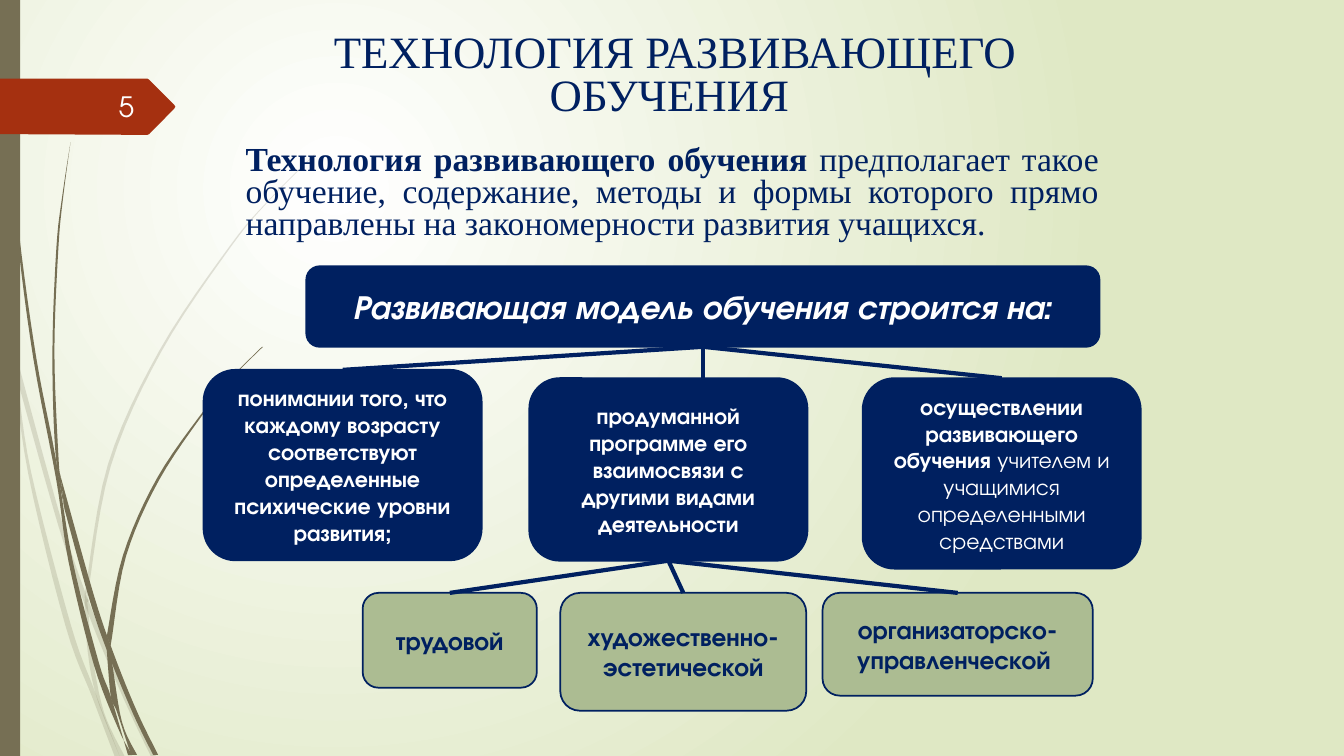
from dataclasses import dataclass
from lxml import etree
from pptx import Presentation, util as u
from pptx.dml.color import RGBColor
from pptx.enum import shapes, text
from pptx.oxml.ns import qn


@dataclass(frozen=True)
class Theme:
    navy: str = "002060"
    sage: str = "ACBC92"
    white: str = "FFFFFF"
    light: str = "FEFFFF"
    lime: str = "DFE8C4"
    bark: str = "766F54"
    rust: str = "A53010"
    serif: str = "Times New Roman"
    sans: str = "TeX Gyre Adventor"
    title: int = 32
    lead: int = 24
    page: int = 20
    leaf: int = 18
    node: int = 16


def curve(pts, steps=6):
    """Return points of a smooth line that passes through pts."""
    ends = [pts[0], *pts, pts[-1]]
    out = []
    for a, b, c, d in zip(ends, ends[1:], ends[2:], ends[3:]):
        for i in range(steps):
            t = i / steps
            out.append(tuple(
                (2 * q + (r - p) * t + (2 * p - 5 * q + 4 * r - s) * t**2
                 + (3 * q - p - 3 * r + s) * t**3) / 2
                for p, q, r, s in zip(a, b, c, d)))
    return out + [pts[-1]]


def write(shape, runs, size, face, tint, align, anchor, slant=None, space=None):
    """Fill a shape with one paragraph; runs are (words, bold) pairs."""
    frame = shape.text_frame
    frame.word_wrap = True
    frame.vertical_anchor = anchor
    para = frame.paragraphs[0]
    para.alignment = align
    para.line_spacing = space
    font = para.font
    font.size, font.name, font.italic = u.Pt(size), face, slant
    font.color.rgb = RGBColor.from_string(tint)
    if len(runs) == 1:
        font.bold = runs[0][1]
    for words, bold in runs:
        run = para.add_run()
        run.text = words
        if len(runs) > 1:
            run.font.bold = bold


look = Theme()
deck = Presentation()
deck.slide_width, deck.slide_height = u.Cm(33.87), u.Cm(19.05)
slide = deck.slides.add_slide(deck.slide_layouts[6])
items = slide.shapes
mid, top = text.MSO_ANCHOR.MIDDLE, text.MSO_ANCHOR.TOP
side = text.PP_ALIGN

# Background glow
glow = slide.background.fill
glow.gradient()
for stop, tint in zip(glow.gradient_stops, (look.white, look.lime)):
    stop.color.rgb = RGBColor.from_string(tint)
grad = next(slide._element.iter(qn("a:gradFill")))
grad.remove(grad.find(qn("a:lin")))
path = etree.SubElement(grad, qn("a:path"), path="circle")
etree.SubElement(path, qn("a:fillToRect"),
                 l="50000", t="50000", r="100000", b="100000")

# Grass blades: two edges each, on a fine grid
grid = u.Cm(0.0254)
pale = [
    ([(0, 282), (9, 322), (17, 376), (31, 469), (70, 619), (93, 683), (119, 751)],
     [(114, 751), (92, 693), (65, 621), (28, 470), (11, 350), (0, 299)]),
    ([(14, 345), (62, 520), (92, 607), (127, 692), (155, 751)],
     [(150, 751), (123, 694), (88, 610), (58, 522), (17, 376)]),
    ([(85, 586), (88, 610), (91, 646), (103, 706), (124, 751)],
     [(119, 751), (96, 692), (87, 646), (84, 599)]),
    ([(85, 586), (85, 584), (107, 461), (158, 348), (228, 244), (268, 197), (312, 153)],
     [(312, 154), (268, 198), (229, 245), (160, 349), (110, 462), (88, 584), (88, 596)]),
]
dark = [
    ([(3, 0), (4, 48), (7, 110), (17, 233), (33, 355), (56, 477), (68, 557), (93, 659), (117, 722), (131, 749)],
     [(127, 749), (110, 691), (98, 657), (72, 556), (55, 453), (36, 355), (19, 232), (8, 109), (5, 48), (4, 0)]),
    ([(60, 472), (93, 590), (113, 649), (136, 706), (157, 749)],
     [(152, 749), (132, 708), (106, 645), (88, 592), (64, 505)]),
    ([(106, 631), (111, 656), (121, 716), (136, 749)],
     [(130, 749), (116, 706), (110, 691), (106, 645)]),
    ([(70, 141), (62, 193), (56, 245), (52, 349), (55, 449), (64, 505)],
     [(60, 472), (58, 453), (54, 349), (58, 245), (63, 193), (70, 141)]),
    ([(106, 631), (122, 551), (156, 474), (204, 405), (231, 373), (260, 344)],
     [(261, 344), (231, 374), (205, 406), (158, 476), (125, 552), (111, 633), (110, 641)]),
]
for blades, alpha in ((pale, "20000"), (dark, "100000")):
    for left, right in blades:
        pts = [(x * grid, y * grid) for x, y in curve(left) + curve(right)]
        form = items.build_freeform(*pts[0])
        form.add_line_segments(pts[1:])
        blade = form.convert_to_shape()
        blade.shadow.inherit = False
        blade.fill.solid()
        blade.fill.fore_color.rgb = RGBColor.from_string(look.bark)
        blade.line.fill.background()
        tone = blade._element.spPr.find(qn("a:solidFill"))[0]
        etree.SubElement(tone, qn("a:alpha"), val=alpha)

# Left bar and page tag
bar = items.add_shape(shapes.MSO_SHAPE.RECTANGLE, 0, 0, u.Cm(0.51), u.Cm(19.05))
edge = [(0, 1.98), (3.71, 1.98), (3.76, 2.01), (4.39, 2.64), (4.42, 2.69),
        (4.39, 2.74), (3.76, 3.38), (3.71, 3.4), (0, 3.38)]
pts = [(u.Cm(x), u.Cm(y)) for x, y in edge]
form = items.build_freeform(*pts[0])
form.add_line_segments(pts[1:])
for part, tint in ((bar, look.bark), (form.convert_to_shape(), look.rust)):
    part.shadow.inherit = False
    part.fill.solid()
    part.fill.fore_color.rgb = RGBColor.from_string(tint)
    part.line.fill.background()

# Title, lead text and page number
labels = [
    ((6.73, 0.74, 20.57, 3.18), [("ТЕХНОЛОГИЯ РАЗВИВАЮЩЕГО ОБУЧЕНИЯ ", None)],
     look.title, look.serif, look.navy, side.CENTER, top, 0.8),
    ((5.94, 3.53, 22, 2.72),
     [("Технология развивающего обучения ", True),
      ("предполагает такое обучение, содержание, методы и формы которого "
       "прямо направлены на закономерности развития учащихся.", False)],
     look.lead, look.serif, look.navy, side.JUSTIFY, mid, 0.8),
    ((1.47, 2.18, 2.16, 1.02), [("5", None)],
     look.page, look.sans, look.light, side.RIGHT, mid, None),
]
for area, runs, size, face, tint, align, anchor, space in labels:
    label = items.add_textbox(*map(u.Cm, area))
    write(label, runs, size, face, tint, align, anchor, space=space)

# Boxes of the scheme
head = [((7.72, 6.71, 19.99, 2.03),
         [("Развивающая модель обучения строится на:", True)])]
nodes = [
    ((5.13, 9.32, 7.01, 4.8),
     [("понимании того, что каждому возрасту соответствуют определенные "
       "психические уровни развития;", True)]),
    ((13.34, 9.53, 7.01, 4.6),
     [("продуманной программе его взаимосвязи с другими видами деятельности", True)]),
    ((21.74, 9.53, 7.01, 4.8),
     [("осуществлении развивающего обучения ", True),
      ("учителем и учащимися определенными средствами", False)]),
]
leaves = [
    ((9.14, 14.94, 4.39, 2.39), [("трудовой", True)]),
    ((14.12, 14.94, 6.2, 2.97), [("художественно-эстетической", True)]),
    ((20.73, 14.94, 6.81, 2.59), [("организаторско-управленческой ", True)]),
]
tiers = [(head, look.navy, look.white, look.lead, True),
         (nodes, look.navy, look.white, look.node, None),
         (leaves, look.sage, look.navy, look.leaf, None)]
boxes = []
for tier, back, tint, size, slant in tiers:
    for area, runs in tier:
        box = items.add_shape(shapes.MSO_SHAPE.ROUNDED_RECTANGLE, *map(u.Cm, area))
        box.shadow.inherit = False
        box.fill.solid()
        box.fill.fore_color.rgb = RGBColor.from_string(back)
        box.line.color.rgb = RGBColor.from_string(look.navy)
        box.line.width = u.Pt(1.25)
        write(box, runs, size, look.sans, tint, side.CENTER, mid, slant)
        boxes.append(box)

# Links; the middle one of the upper fan drops straight down
root, first, core, last, *ends = boxes
for start, goals in ((root, (first, core, last)), (core, ends)):
    for goal in goals:
        x = start.left + start.width // 2
        link = items.add_connector(shapes.MSO_CONNECTOR.STRAIGHT,
                                   x, start.top + start.height, x, goal.top)
        link.begin_connect(start, 2)
        if goal is not core:
            link.end_connect(goal, 0)
        link.line.color.rgb = RGBColor.from_string(look.navy)
        link.line.width = u.Pt(3)
        etree.SubElement(link._element.spPr, qn("a:effectLst"))

deck.save("out.pptx")
